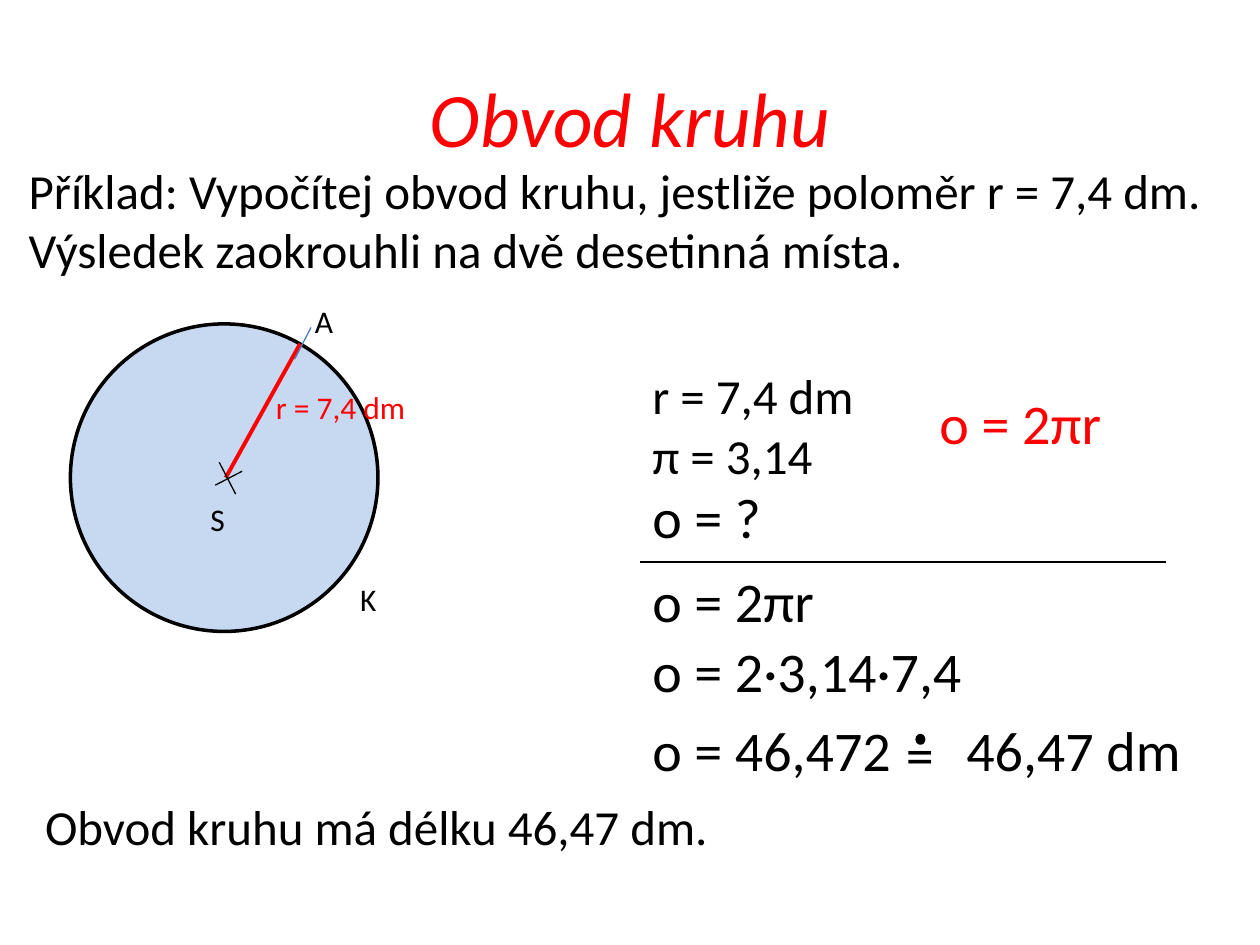
"""Build a slide that works out the circumference of a circle."""
from lxml import etree
from pptx import Presentation
from pptx import util as u
from pptx.dml.color import RGBColor
from pptx.enum import shapes, text
from pptx.oxml.ns import qn

COLORS = {"black": "000000", "red": "FF0000", "disc": "C6D9F1", "blue": "4B7EBC"}
FONT = "Calibri"
SOLUTION_LEFT = 12.9

deck = Presentation()
deck.slide_width, deck.slide_height = u.Cm(25.4), u.Cm(19.05)
page = deck.slides.add_slide(deck.slide_layouts[5])


def style(para, size, color):
    for span in para.runs:
        span.font.name = FONT
        span.font.size = u.Pt(size)
        span.font.color.rgb = RGBColor.from_string(COLORS[color])


title = page.shapes.title
title.left, title.top, title.width, title.height = map(u.Cm, (1.27, 0.76, 22.86, 3.18))
title.text_frame.text = "Obvod kruhu"
title.text_frame.vertical_anchor = text.MSO_ANCHOR.MIDDLE
heading = title.text_frame.paragraphs[0]
heading.alignment = text.PP_ALIGN.CENTER
style(heading, 44, "red")
heading.runs[0].font.italic = True

discs = [
    (1.42, 6.53, 6.2, 6.2, "disc"),
    (18.49, 14.83, 0.13, 0.15, "black"),
]
for left, top, width, height, fill in discs:
    disc = page.shapes.add_shape(
        shapes.MSO_SHAPE.OVAL, u.Cm(left), u.Cm(top), u.Cm(width), u.Cm(height))
    disc.shadow.inherit = False
    disc.fill.solid()
    disc.fill.fore_color.rgb = RGBColor.from_string(COLORS[fill])
    disc.line.color.rgb = RGBColor.from_string(COLORS["black"])
    disc.line.width = u.Pt(2)

lines = [
    (6.05, 6.93, 4.55, 9.63, "red", 2.25),
    (4.42, 9.32, 4.75, 9.96, "black", 0.75),
    (4.34, 9.78, 4.88, 9.5, "black", 0.75),
    (5.94, 7.24, 6.27, 6.6, "blue", 0.75),
    (SOLUTION_LEFT, 11.33, 23.5, 11.33, "black", 0.75),
]
for x1, y1, x2, y2, color, weight in lines:
    line = page.shapes.add_connector(
        shapes.MSO_CONNECTOR.STRAIGHT, u.Cm(x1), u.Cm(y1), u.Cm(x2), u.Cm(y2))
    line.line.color.rgb = RGBColor.from_string(COLORS[color])
    line.line.width = u.Pt(weight)
    etree.SubElement(line._element.spPr, qn("a:effectLst"))

problem = ("Příklad: Vypočítej obvod kruhu, jestliže poloměr r = 7,4 dm. "
           "Výsledek zaokrouhli na dvě desetinná místa.")
heights = {18: 1.03, 28: 1.45, 32: 1.62}
texts = [
    (problem, 0.33, 3.12, 24.59, 28, "black"),
    ("S", 3.99, 9.96, 0.8, 18, "black"),
    ("r = 7,4 dm", 5.31, 7.7, 3.6, 18, "red"),
    ("K", 7.01, 11.56, 0.9, 18, "black"),
    ("A", 6.1, 5.97, 0.9, 18, "black"),
    ("r = 7,4 dm", SOLUTION_LEFT, 7.24, 4.7, 28, "black"),
    ("π = 3,14", SOLUTION_LEFT, 8.46, 3.9, 28, "black"),
    ("o = ?", SOLUTION_LEFT, 9.6, 2.8, 32, "black"),
    ("o = 2πr", SOLUTION_LEFT, 11.3, 3.9, 32, "black"),
    ("o = 2·3,14·7,4", SOLUTION_LEFT, 12.7, 6.9, 32, "black"),
    ("o = 46,472", SOLUTION_LEFT, 14.3, 5.5, 32, "black"),
    ("=", 18.01, 14.38, 1.6, 32, "black"),
    ("46,47 dm", 19.23, 14.3, 5.1, 32, "black"),
    ("o = 2πr", 18.69, 7.7, 3.9, 32, "red"),
    ("Obvod kruhu má délku 46,47 dm.", 0.66, 15.93, 14.7, 28, "black"),
]
for words, left, top, width, size, color in texts:
    height = 2.64 if words == problem else heights[size]
    box = page.shapes.add_textbox(u.Cm(left), u.Cm(top), u.Cm(width), u.Cm(height))
    box.text_frame.word_wrap = True
    box.text_frame.text = words
    style(box.text_frame.paragraphs[0], size, color)

deck.save("out.pptx")
